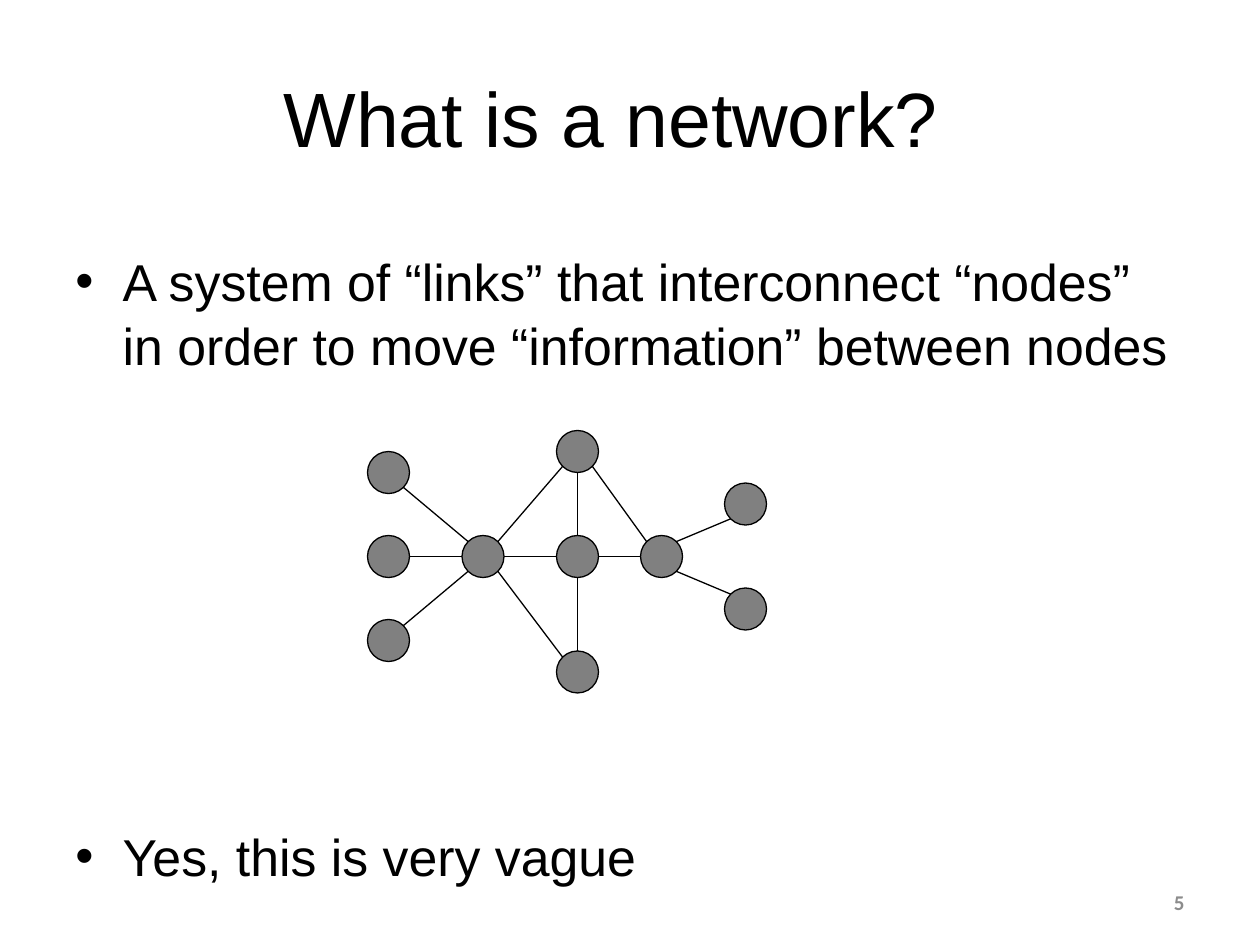
from math import copysign, sqrt

from lxml import etree
from pptx import Presentation
from pptx.dml.color import RGBColor
from pptx.enum.shapes import MSO_CONNECTOR, MSO_SHAPE
from pptx.enum.text import MSO_ANCHOR, PP_ALIGN
from pptx.oxml.ns import qn
from pptx.util import Inches, Pt

OVAL = MSO_SHAPE.OVAL
STRAIGHT = MSO_CONNECTOR.STRAIGHT
MIDDLE = MSO_ANCHOR.MIDDLE
CENTER, RIGHT = PP_ALIGN.CENTER, PP_ALIGN.RIGHT

TITLE_ONLY = 5
GRID = Inches(1) / 12
RADIUS = 2
BLACK, GRAY, LIGHT_GRAY = "000000", "808080", "8C8C8C"

NODES = {
    "top": (55, 43),
    "hub": (46, 53),
    "bottom": (55, 64),
    "center": (55, 53),
    "relay": (63, 53),
    "right_low": (71, 58),
    "right_high": (71, 48),
    "left_high": (37, 45),
    "left_middle": (37, 53),
    "left_low": (37, 61),
}
LINKS = [
    ("left_high", "hub"),
    ("left_middle", "hub"),
    ("left_low", "hub"),
    ("bottom", "center"),
    ("center", "top"),
    ("hub", "center"),
    ("relay", "center"),
    ("relay", "right_high"),
    ("relay", "right_low"),
    ("hub", "top"),
    ("hub", "bottom"),
    ("top", "relay"),
]


def color(value):
    return RGBColor.from_string(value)


def grid(value):
    return round(value * GRID)


def place(shape, left, top, width, height):
    shape.left, shape.top = Inches(left), Inches(top)
    shape.width, shape.height = Inches(width), Inches(height)


def add_run(paragraph, text, size, font="Arial", fill=BLACK, bold=False):
    run = paragraph.add_run()
    run.text = text
    run.font.name = font
    run.font.size = Pt(size)
    run.font.bold = bold
    run.font.color.rgb = color(fill)


def add_title(slide, text):
    title = slide.shapes.title
    place(title, 0.5, 0.3, 9, 1.25)
    title.text_frame.vertical_anchor = MIDDLE
    paragraph = title.text_frame.paragraphs[0]
    paragraph.alignment = CENTER
    add_run(paragraph, text, 44)


def add_text_box(slide, left, top, width, height):
    box = slide.shapes.add_textbox(0, 0, 0, 0)
    place(box, left, top, width, height)
    box.text_frame.word_wrap = True
    return box.text_frame


def add_bullet(paragraph, text, space_before):
    paragraph.space_before = Pt(space_before)
    paragraph.line_spacing = 1.04
    properties = paragraph._p.get_or_add_pPr()
    indent = Pt(27)
    properties.set("marL", str(indent))
    properties.set("indent", str(-indent))
    etree.SubElement(properties, qn("a:buFont")).set("typeface", "Arial")
    etree.SubElement(properties, qn("a:buChar")).set("char", "•")
    add_run(paragraph, text, 29.6)


def add_body(slide):
    frame = add_text_box(slide, 0.5, 1.88, 9, 5.29)
    frame.margin_top = Inches(0.08)
    add_bullet(
        frame.paragraphs[0],
        "A system of “links” that interconnect “nodes” in order to move “information” between nodes",
        0,
    )
    add_bullet(frame.add_paragraph(), "Yes, this is very vague", 255)


def style_line(line):
    line.color.rgb = color(BLACK)
    line.width = Pt(0.75)


def add_node(slide, center):
    column, row = center
    size = grid(2 * RADIUS)
    node = slide.shapes.add_shape(OVAL, grid(column - RADIUS), grid(row - RADIUS), size, size)
    node.shadow.inherit = False
    node.fill.solid()
    node.fill.fore_color.rgb = color(GRAY)
    style_line(node.line)


def direction(difference):
    return copysign(1, difference) if difference else 0


def add_link(slide, start, end):
    steps = [direction(b - a) for a, b in zip(start, end)]
    reach = RADIUS / sqrt(sum(map(abs, steps)))
    begin = [grid(a + reach * step) for a, step in zip(start, steps)]
    finish = [grid(b - reach * step) for b, step in zip(end, steps)]
    link = slide.shapes.add_connector(STRAIGHT, *begin, *finish)
    style_line(link.line)
    etree.SubElement(link._element.spPr, qn("a:effectLst"))


def add_slide_number(slide, number):
    frame = add_text_box(slide, 7.17, 6.96, 2.33, 0.4)
    frame.vertical_anchor = MIDDLE
    paragraph = frame.paragraphs[0]
    paragraph.alignment = RIGHT
    add_run(paragraph, number, 12, "Calibri", LIGHT_GRAY, True)


def main():
    presentation = Presentation()
    presentation.slide_width, presentation.slide_height = Inches(10), Inches(7.5)
    slide = presentation.slides.add_slide(presentation.slide_layouts[TITLE_ONLY])
    add_title(slide, "What is a network?\t")
    add_body(slide)
    for center in NODES.values():
        add_node(slide, center)
    for start, end in LINKS:
        add_link(slide, NODES[start], NODES[end])
    add_slide_number(slide, "5")
    presentation.save("out.pptx")


if __name__ == "__main__":
    main()
